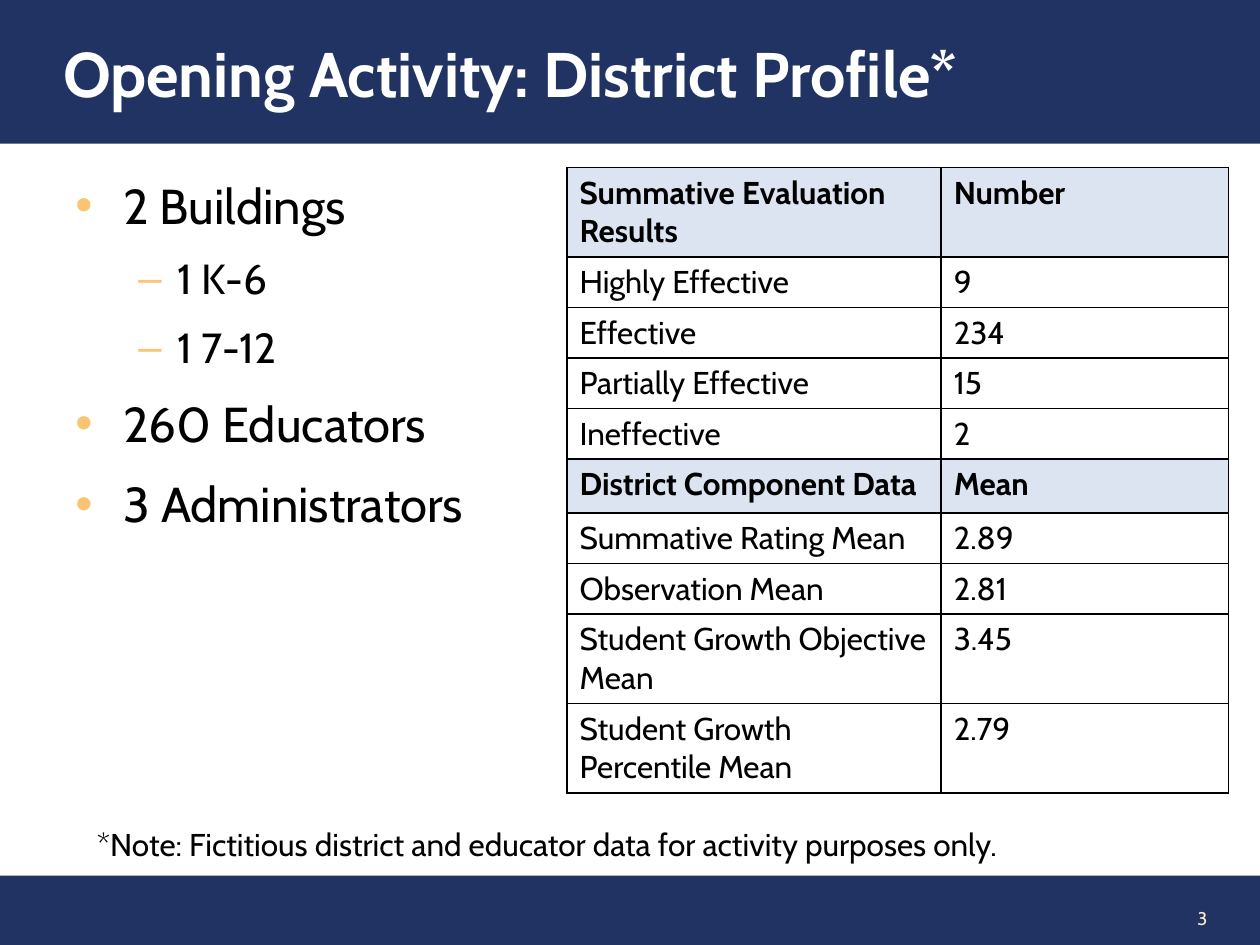
from lxml import etree
from pptx import Presentation
from pptx.dml.color import RGBColor
from pptx.enum import shapes, text
from pptx.oxml import ns
from pptx.util import Inches, Pt

FONT = "Cabin"
NAVY = RGBColor(0x21, 0x33, 0x63)
WHITE = RGBColor(0xFF, 0xFF, 0xFF)
BLACK = RGBColor(0x00, 0x00, 0x00)
CREAM = RGBColor(0xFE, 0xEB, 0xD0)
ORANGE = RGBColor(0xFB, 0xC4, 0x73)
PALE_BLUE = RGBColor(0xDC, 0xE3, 0xF1)

PROFILE = [
    (0, "2 Buildings"),
    (1, "1 K-6"),
    (1, "1 7-12"),
    (0, "260 Educators"),
    (0, "3 Administrators"),
]
LEVELS = [("•", 28, 0.38, 0.38), ("–", 24, 0.81, 0.31)]

COLUMN_WIDTHS = [2.97, 2.28]
HEADER_ROWS = (0, 5)
RESULTS = [
    ("Summative Evaluation Results", "Number", 0.71),
    ("Highly Effective", "9", 0.4),
    ("Effective", "234", 0.4),
    ("Partially Effective", "15", 0.4),
    ("Ineffective", "2", 0.4),
    ("District Component Data", "Mean", 0.43),
    ("Summative Rating Mean", "2.89", 0.4),
    ("Observation Mean", "2.81", 0.4),
    ("Student Growth Objective Mean", "3.45", 0.71),
    ("Student Growth Percentile Mean", "2.79", 0.71),
]


def place(shape, left, top, width, height):
    shape.left, shape.top = Inches(left), Inches(top)
    shape.width, shape.height = Inches(width), Inches(height)


def style_paragraph(paragraph, size, color=BLACK, bold=False):
    for run in paragraph.runs:
        run.font.name = FONT
        run.font.size = Pt(size)
        run.font.bold = bold
        run.font.color.rgb = color


def add_title(slide, words):
    title = slide.shapes.title
    place(title, 0, 0, 10, 1.14)
    title.fill.solid()
    title.fill.fore_color.rgb = NAVY
    frame = title.text_frame
    frame.text = words
    frame.auto_size = text.MSO_AUTO_SIZE.NONE
    frame.vertical_anchor = text.MSO_ANCHOR.MIDDLE
    frame.margin_left = Inches(0.5)
    frame.paragraphs[0].alignment = text.PP_ALIGN.LEFT
    style_paragraph(frame.paragraphs[0], 36, WHITE, True)


def add_footer_bar(slide):
    bar = slide.shapes.add_shape(
        shapes.MSO_SHAPE.RECTANGLE, Inches(0), Inches(6.95), Inches(10), Inches(0.55)
    )
    bar.shadow.inherit = False
    bar.fill.solid()
    bar.fill.fore_color.rgb = NAVY
    bar.line.fill.background()


def add_text(slide, words, left, top, width, height, size, color=BLACK):
    box = slide.shapes.add_textbox(
        Inches(left), Inches(top), Inches(width), Inches(height)
    )
    frame = box.text_frame
    frame.word_wrap = True
    frame.text = words
    style_paragraph(frame.paragraphs[0], size, color)
    return frame


def add_bullet(paragraph, character, indent, hanging):
    properties = paragraph._p.get_or_add_pPr()
    properties.set("marL", str(Inches(indent)))
    properties.set("indent", str(-Inches(hanging)))
    bullet_color = etree.SubElement(properties, ns.qn("a:buClr"))
    etree.SubElement(bullet_color, ns.qn("a:srgbClr"), val=str(ORANGE))
    etree.SubElement(properties, ns.qn("a:buFont"), typeface="Arial")
    etree.SubElement(properties, ns.qn("a:buChar"), char=character)


def add_profile(slide):
    lines = "\n".join(words for _, words in PROFILE)
    frame = add_text(slide, lines, 0.5, 1.25, 3.67, 3.12, 28)
    for index, (paragraph, (level, _)) in enumerate(zip(frame.paragraphs, PROFILE)):
        character, size, indent, hanging = LEVELS[level]
        add_bullet(paragraph, character, indent, hanging)
        paragraph.level = level
        paragraph.line_spacing = 1.2
        if index:
            paragraph.space_before = Pt(size * 0.2)
        style_paragraph(paragraph, size)


def set_borders(cell):
    properties = cell._tc.get_or_add_tcPr()
    for position, side in enumerate(("lnL", "lnR", "lnT", "lnB")):
        line = etree.Element(ns.qn(f"a:{side}"), w=str(Pt(1)))
        fill = etree.SubElement(line, ns.qn("a:solidFill"))
        etree.SubElement(fill, ns.qn("a:srgbClr"), val=str(BLACK))
        properties.insert(position, line)


def fill_cell(cell, words, header):
    cell.text = words
    style_paragraph(cell.text_frame.paragraphs[0], 18, bold=header)
    if header:
        cell.fill.solid()
        cell.fill.fore_color.rgb = PALE_BLUE
    else:
        cell.fill.background()
    set_borders(cell)


def add_results_table(slide):
    frame = slide.shapes.add_table(
        len(RESULTS), len(COLUMN_WIDTHS),
        Inches(4.5), Inches(1.33), Inches(5.25), Inches(4.96),
    )
    table = frame.table
    table.first_row = False
    table.horz_banding = False
    for column, width in zip(table.columns, COLUMN_WIDTHS):
        column.width = Inches(width)
    for index, (*values, height) in enumerate(RESULTS):
        table.rows[index].height = Inches(height)
        for column, value in enumerate(values):
            fill_cell(table.cell(index, column), value, index in HEADER_ROWS)


def add_slide_number(slide):
    frame = add_text(slide, "3", 8.22, 7.09, 1.46, 0.4, 10.5, CREAM)
    frame.vertical_anchor = text.MSO_ANCHOR.MIDDLE
    frame.paragraphs[0].alignment = text.PP_ALIGN.RIGHT


def main():
    presentation = Presentation()
    presentation.slide_width = Inches(10)
    presentation.slide_height = Inches(7.5)
    slide = presentation.slides.add_slide(presentation.slide_layouts[5])
    add_footer_bar(slide)
    add_slide_number(slide)
    add_title(slide, "Opening Activity: District Profile*")
    add_results_table(slide)
    add_profile(slide)
    note = "*Note: Fictitious district and educator data for activity purposes only."
    add_text(slide, note, 0.67, 6.5, 8.08, 0.4, 18)
    presentation.save("out.pptx")


if __name__ == "__main__":
    main()
